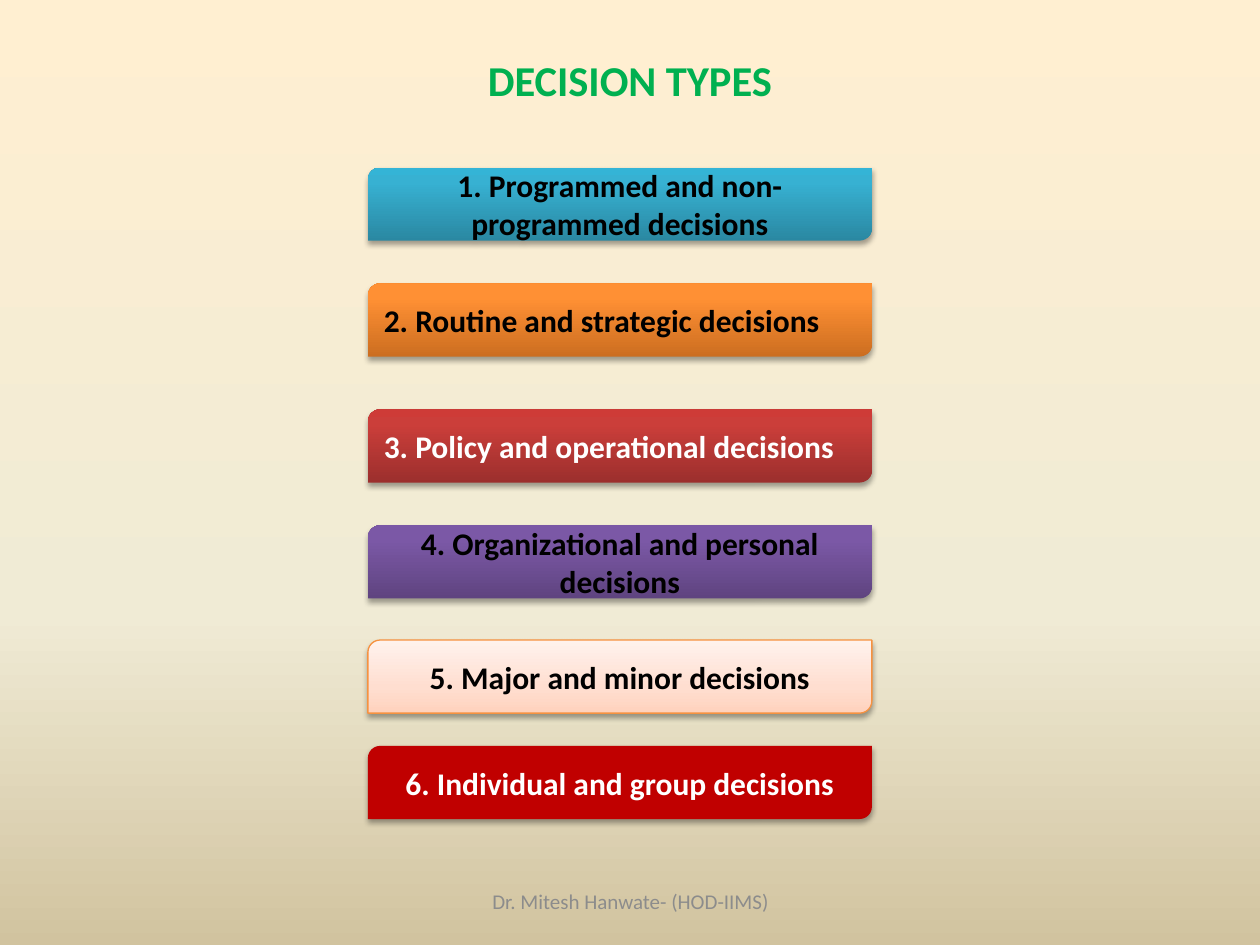
from lxml import etree
from pptx import Presentation
from pptx.dml.color import RGBColor
from pptx.enum.shapes import MSO_SHAPE
from pptx.enum.text import MSO_ANCHOR, PP_ALIGN
from pptx.oxml.ns import qn
from pptx.util import Inches, Pt

BANNER = MSO_SHAPE.ROUND_2_DIAG_RECTANGLE
MIDDLE = MSO_ANCHOR.MIDDLE
LEFT, CENTER = PP_ALIGN.LEFT, PP_ALIGN.CENTER
UPWARD, DOWNWARD = 90, 270
TITLE_ONLY = 5

BACKGROUND = [(0, "FFEFD1"), (65, "F0EBD5"), (100, "D1C39F")]
BLACK, WHITE = "000000", "FFFFFF"
# top, text, alignment, text colour, gradient stops or solid colour, line colour
DECISIONS = [
    (1.33, "1. Programmed and non-programmed decisions", CENTER, BLACK,
     [(0, "2A88A2"), (80, "37B1D2"), (100, "34B4D6")], None),
    (2.25, "2. Routine and strategic decisions", LEFT, BLACK,
     [(0, "CC6E20"), (80, "FF9034"), (100, "FF9136")], None),
    (3.25, "3. Policy and operational decisions", LEFT, WHITE,
     [(0, "9C2F2D"), (80, "CB3E3A"), (100, "CE3B37")], None),
    (4.17, "4. Organizational and personal decisions", CENTER, BLACK,
     [(0, "5F4480"), (80, "7B58A6"), (100, "7C57A8")], None),
    (5.08, "5. Major and minor decisions", CENTER, BLACK,
     [(0, "FFD2BD"), (35, "FFDED0"), (100, "FFF2ED")], "F69240"),
    (5.92, "6. Individual and group decisions", CENTER, WHITE, "C00000", None),
]


def rgb(value):
    return RGBColor.from_string(value)


def add_child(parent, tag, **attributes):
    values = {name: str(value) for name, value in attributes.items()}
    return etree.SubElement(parent, qn(tag), values)


def set_gradient(fill, element, stops, angle):
    """Fill with any number of (percent, colour) stops; element holds the fill."""
    fill.gradient()
    fill.gradient_angle = angle
    stop_list = next(element.iter(qn("a:gsLst")))
    for stop in list(stop_list):
        stop_list.remove(stop)
    for percent, color in stops:
        stop = add_child(stop_list, "a:gs", pos=percent * 1000)
        add_child(stop, "a:srgbClr", val=color)


def set_shadow(shape):
    shape.shadow.inherit = False
    effects = next(shape.element.iter(qn("a:effectLst")))
    shadow = add_child(effects, "a:outerShdw", blurRad=Pt(3.1), dist=Pt(1.8),
                       dir=90 * 60000, rotWithShape=0)
    color = add_child(shadow, "a:srgbClr", val=BLACK)
    add_child(color, "a:alpha", val=35000)


class SlideBuilder:
    font_name = "Calibri"

    def __init__(self, presentation):
        self.slide = presentation.slides.add_slide(
            presentation.slide_layouts[TITLE_ONLY])

    def background(self, stops):
        set_gradient(self.slide.background.fill, self.slide.element, stops, DOWNWARD)

    def add_text(self, shape, text, size, color, alignment=CENTER, bold=False):
        frame = shape.text_frame
        frame.word_wrap = True
        frame.vertical_anchor = MIDDLE
        paragraph = frame.paragraphs[0]
        paragraph.alignment = alignment
        run = paragraph.add_run()
        run.text = text
        run.font.name = self.font_name
        run.font.size = Pt(size)
        run.font.bold = bold
        run.font.color.rgb = rgb(color)

    def title(self, text):
        title = self.slide.shapes.title
        title.left, title.top = Inches(0.5), Inches(0.25)
        title.width, title.height = Inches(9), Inches(0.58)
        title.text_frame.margin_top = Inches(0.23)
        self.add_text(title, text, 24.3, "00B050", bold=True)

    def banner(self, top, text, alignment, text_color, fill, line_color):
        shape = self.slide.shapes.add_shape(
            BANNER, Inches(2.92), Inches(top), Inches(4), Inches(0.58))
        if isinstance(fill, str):
            shape.fill.solid()
            shape.fill.fore_color.rgb = rgb(fill)
        else:
            set_gradient(shape.fill, shape.element, fill, UPWARD)
        if line_color:
            shape.line.color.rgb = rgb(line_color)
            shape.line.width = Pt(0.75)
        else:
            shape.line.fill.background()
        set_shadow(shape)
        self.add_text(shape, text, 18, text_color, alignment, bold=True)

    def footer(self, text):
        box = self.slide.shapes.add_textbox(
            Inches(3.42), Inches(6.95), Inches(3.17), Inches(0.4))
        self.add_text(box, text, 12, "8C8C8C")


def main():
    presentation = Presentation()
    presentation.slide_width = Inches(10)
    presentation.slide_height = Inches(7.5)
    builder = SlideBuilder(presentation)
    builder.background(BACKGROUND)
    builder.title("DECISION TYPES")
    for decision in DECISIONS:
        builder.banner(*decision)
    builder.footer("Dr. Mitesh Hanwate- (HOD-IIMS)")
    presentation.save("out.pptx")


if __name__ == "__main__":
    main()
